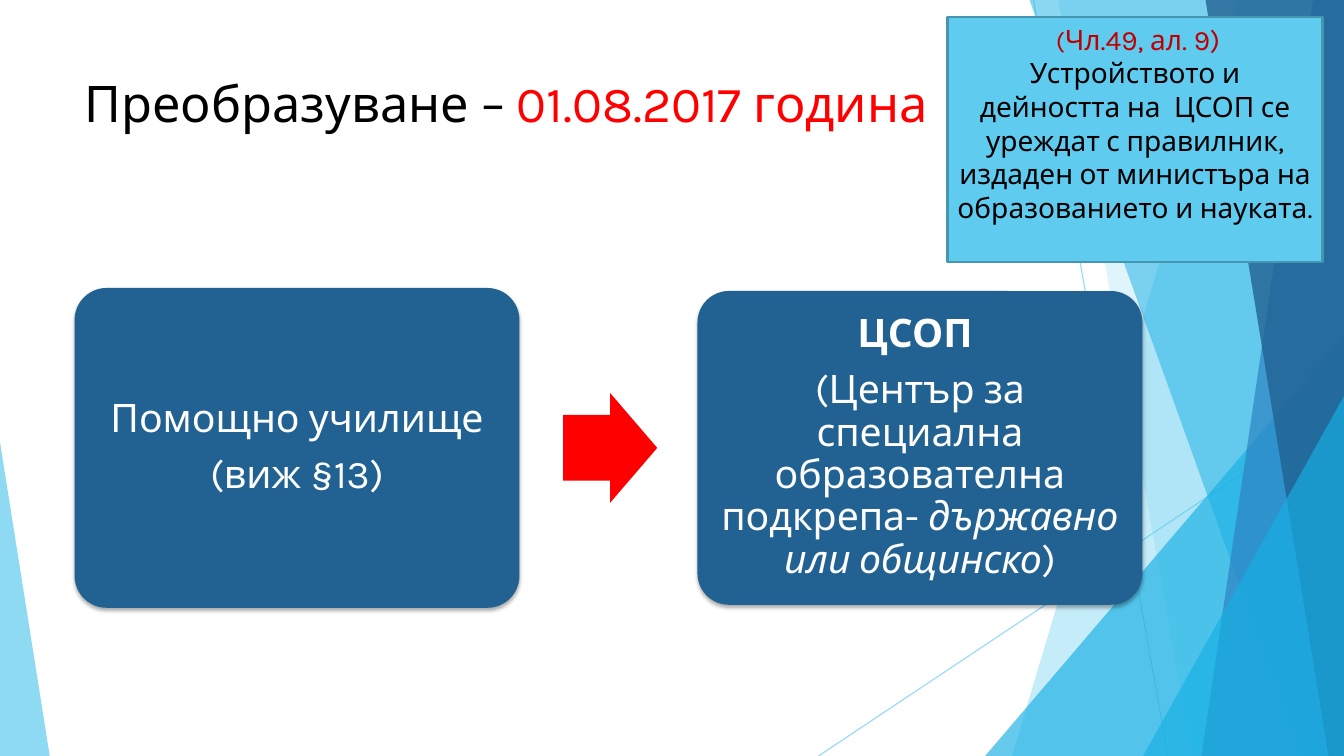
from dataclasses import dataclass

from lxml.etree import SubElement
from pptx import Presentation
from pptx.dml.color import RGBColor
from pptx.enum.shapes import MSO_CONNECTOR, MSO_SHAPE
from pptx.enum.text import MSO_ANCHOR, MSO_AUTO_SIZE, PP_ALIGN
from pptx.oxml.ns import qn
from pptx.util import Inches, Pt


@dataclass(frozen=True)
class Theme:
    font: str = "Karla"
    sky: str = "5FCBEF"
    cyan: str = "17B0E4"
    blue: str = "2E83C3"
    navy: str = "226292"
    edge: str = "4696B1"
    red: str = "FF0000"
    crimson: str = "C00000"
    black: str = "000000"
    white: str = "FFFFFF"
    title_size: int = 36
    card_size: int = 28
    note_size: int = 20
    lead_size: int = 18


T = Theme()
W, H = Inches(13.333), Inches(7.5)

# All positions are percentages of the slide's width and height.
TITLE_BOX = (5.55, 8.9, 70.5, 19.2)
TITLE = [("Преобразуване – ", {"color": T.black}),
         ("01.08.2017 година", {"color": T.red})]

CARDS = [
    ((5.55, 38.1, 33.1, 42.3),
     [[("Помощно училище", {})], [("(виж §13)", {})]]),
    ((51.9, 38.5, 33.1, 41.5),
     [[("ЦСОП ", {"bold": True})],
      [("(Център за специална образователна подкрепа- ", {}),
       ("държавно или общинско", {"italic": True}), (")", {})]]),
]
ARROW_BOX = (41.9, 52, 7, 14.5)

NOTE_BOX = (70.5, 2.3, 27.9, 32.4)
NOTE = [(" (", {"color": T.crimson, "size": T.lead_size}),
        ("Чл.49, ал. 9) ", {"color": T.crimson}),
        ("Устройството и дейността на  ЦСОП се уреждат с правилник, "
         "издаден от министъра на образованието и науката.  ",
         {"color": T.black})]

RAYS = [(76.9, 0, 86.9, 100), (100, 53.7, 60.9, 100)]
FACETS = [
    ("band", (92.1, 75.3), T.sky, 36),
    ("band", (78.75, 88.7), T.sky, 20),
    ("peak", (73.3, 44.4, 26.7, 55.6, 1), T.cyan, 66),
    ("band", (76.6, 96.8), T.cyan, 50),
    ("band", (97.7, 89.4), T.blue, 70),
    ("band", (89.7, 98.85), T.navy, 80),
    ("peak", (85.05, 52.4, 14.95, 47.6, 1), T.cyan, 66),
    ("peak", (0, 58.5, 3.7, 41.5, 0), T.sky, 70),
]


def x(share):
    return round(W * share / 100)


def y(share):
    return round(H * share / 100)


def place(box):
    left, top, width, height = box
    return x(left), y(top), x(width), y(height)


def set_alpha(sp, percent):
    for clr in sp._element.spPr.iter(qn("a:srgbClr")):
        SubElement(clr, qn("a:alpha"), val=str(percent * 1000))


def paint(sp, color):
    sp.shadow.inherit = False
    sp.fill.solid()
    sp.fill.fore_color.rgb = RGBColor.from_string(color)
    sp.line.fill.background()


def add_preset(s, preset, box, color, adjustments=()):
    sp = s.shapes.add_shape(preset, *place(box))
    paint(sp, color)
    for i, value in enumerate(adjustments):
        sp.adjustments[i] = value
    return sp


def cast_shadow(sp):
    effects = sp._element.spPr.find(qn("a:effectLst"))
    shadow = SubElement(effects, qn("a:outerShdw"), blurRad=str(Pt(3)),
                        dist=str(Pt(2)), dir="5400000", rotWithShape="0")
    clr = SubElement(shadow, qn("a:srgbClr"), val=T.black)
    SubElement(clr, qn("a:alpha"), val="35000")


def write(p, runs, size, align, color=T.white):
    p.alignment = align
    p.font.name = T.font
    p.font.size = Pt(size)
    for text, style in runs:
        r = p.add_run()
        r.text = text
        r.font.name = T.font
        r.font.size = Pt(style.get("size", size))
        r.font.bold = style.get("bold", False)
        r.font.italic = style.get("italic", False)
        r.font.color.rgb = RGBColor.from_string(style.get("color", color))


def add_backdrop(s):
    for x1, y1, x2, y2 in RAYS:
        ray = s.shapes.add_connector(MSO_CONNECTOR.STRAIGHT,
                                     x(x1), y(y1), x(x2), y(y2))
        ray.line.color.rgb = RGBColor.from_string(T.sky)
        ray.line.width = Pt(0.75)
        set_alpha(ray, 70)
        SubElement(ray._element.spPr, qn("a:effectLst"))
    for kind, geometry, color, alpha in FACETS:
        if kind == "band":
            top, bottom = geometry
            outline = s.shapes.build_freeform(x(top), 0)
            outline.add_line_segments([(W, 0), (W, H), (x(bottom), H)])
            sp = outline.convert_to_shape()
            paint(sp, color)
        else:
            *box, apex = geometry
            sp = add_preset(s, MSO_SHAPE.ISOSCELES_TRIANGLE, box, color, [apex])
        set_alpha(sp, alpha)


def add_title(s):
    title = s.shapes.title
    s.shapes._spTree.append(title._element)
    title.left, title.top, title.width, title.height = place(TITLE_BOX)
    tf = title.text_frame
    tf.auto_size = MSO_AUTO_SIZE.NONE
    tf.vertical_anchor = MSO_ANCHOR.TOP
    write(tf.paragraphs[0], TITLE, T.title_size, PP_ALIGN.LEFT)


def add_card(s, box, paragraphs):
    sp = add_preset(s, MSO_SHAPE.ROUNDED_RECTANGLE, box, T.navy, [0.1])
    cast_shadow(sp)
    tf = sp.text_frame
    tf.word_wrap = True
    tf.vertical_anchor = MSO_ANCHOR.MIDDLE
    tf.margin_left = tf.margin_right = Inches(0.12)
    tf.margin_top = tf.margin_bottom = Inches(0.12)
    for i, runs in enumerate(paragraphs):
        p = tf.add_paragraph() if i else tf.paragraphs[0]
        p.line_spacing = 0.9
        p.space_after = Pt(T.card_size * 0.35)
        write(p, runs, T.card_size, PP_ALIGN.CENTER)


def add_note(s):
    sp = add_preset(s, MSO_SHAPE.RECTANGLE, NOTE_BOX, T.sky)
    sp.line.color.rgb = RGBColor.from_string(T.edge)
    sp.line.width = Pt(1.5)
    tf = sp.text_frame
    tf.word_wrap = True
    tf.vertical_anchor = MSO_ANCHOR.MIDDLE
    write(tf.paragraphs[0], NOTE, T.note_size, PP_ALIGN.CENTER)


def main():
    prs = Presentation()
    prs.slide_width, prs.slide_height = W, H
    s = prs.slides.add_slide(prs.slide_layouts[5])
    add_backdrop(s)
    add_title(s)
    for box, paragraphs in CARDS:
        add_card(s, box, paragraphs)
    add_preset(s, MSO_SHAPE.RIGHT_ARROW, ARROW_BOX, T.red, [0.6, 0.5])
    add_note(s)
    prs.save("out.pptx")


if __name__ == "__main__":
    main()
